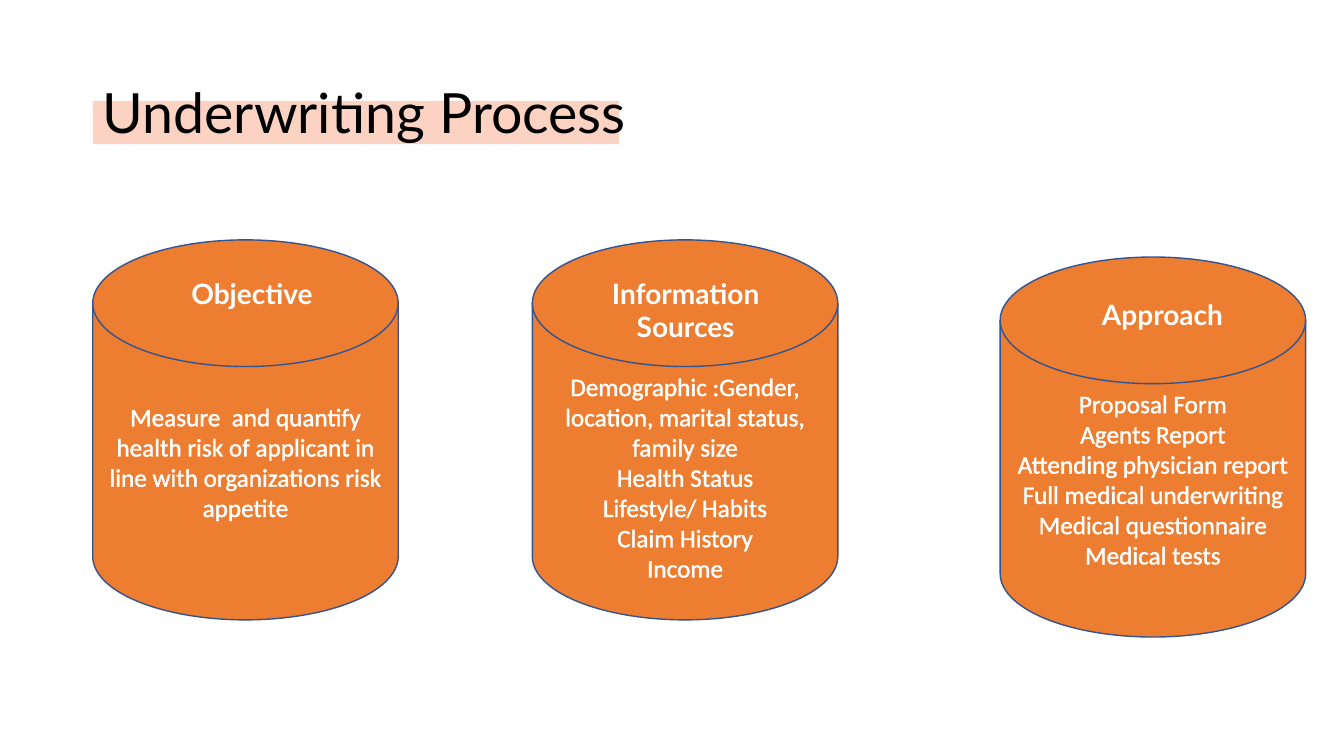
from dataclasses import dataclass

from lxml.etree import SubElement
from pptx import Presentation
from pptx.dml.color import RGBColor
from pptx.enum.shapes import MSO_SHAPE as Preset
from pptx.enum.text import MSO_ANCHOR as Anchor, PP_ALIGN as Align
from pptx.oxml.ns import qn
from pptx.shapes.autoshape import Shape
from pptx.slide import Slide
from pptx.text.text import TextFrame
from pptx.util import Inches, Pt

WHITE = RGBColor(0xFF, 0xFF, 0xFF)
BLACK = RGBColor(0, 0, 0)
ORANGE = RGBColor(0xED, 0x7D, 0x31)
BLUE = RGBColor(0x32, 0x54, 0x91)
PEACH = RGBColor(0xFC, 0xD3, 0xC2)

TITLE_FORMAT = {"name": "Lato", "size": Pt(39.6)}
HEADING_FORMAT = {"name": "Lato", "size": Pt(20), "bold": True}
BODY_FORMAT = {"name": "Calibri", "size": Pt(18)}

DISK_WIDTH, DISK_HEIGHT = 3.03, 3.77
HEADING_WIDTH = 2.22


@dataclass(frozen=True)
class Stage:
    heading: str
    lines: tuple[str, ...]
    left: float
    top: float
    heading_left: float
    heading_top: float
    heading_height: float = 0.44
    top_inset: float = 0.05


STAGES = (
    Stage(
        "Objective",
        ("Measure  and quantify health risk of applicant in line with organizations risk appetite",),
        0.92, 2.38, 1.39, 2.69,
    ),
    Stage(
        "Information Sources",
        (
            "Demographic :Gender, location, marital status, family size",
            "Health Status",
            "Lifestyle/ Habits",
            "Claim History",
            "Income",
        ),
        5.28, 2.38, 5.69, 2.69, heading_height=0.77, top_inset=0.35,
    ),
    Stage(
        "Approach",
        (
            "Proposal Form",
            "Agents Report",
            "Attending physician report",
            "Full medical underwriting",
            "Medical questionnaire",
            "Medical tests",
        ),
        9.92, 2.55, 10.42, 2.9,
    ),
)


def write_lines(frame: TextFrame, lines: tuple[str, ...], font_format: dict,
                color: RGBColor, alignment: Align) -> None:
    frame.word_wrap = True
    frame.text = "\n".join(lines)
    for paragraph in frame.paragraphs:
        paragraph.alignment = alignment
        for run in paragraph.runs:
            for name, value in font_format.items():
                setattr(run.font, name, value)
            run.font.color.rgb = color


def outline_text(frame: TextFrame, color: RGBColor, width: float) -> None:
    for paragraph in frame.paragraphs:
        for run in paragraph.runs:
            properties = run.font._element
            line = SubElement(properties, qn("a:ln"), w=str(Pt(width)))
            fill = SubElement(line, qn("a:solidFill"))
            SubElement(fill, qn("a:srgbClr"), val=str(color))
            properties.insert(0, line)


def add_filled_shape(slide: Slide, preset: Preset, left: float, top: float,
                     width: float, height: float, color: RGBColor) -> Shape:
    shape = slide.shapes.add_shape(
        preset, Inches(left), Inches(top), Inches(width), Inches(height))
    shape.shadow.inherit = False
    shape.fill.solid()
    shape.fill.fore_color.rgb = color
    return shape


def add_text(slide: Slide, text: str, left: float, top: float, width: float,
             height: float, font_format: dict, color: RGBColor,
             alignment: Align) -> TextFrame:
    box = slide.shapes.add_textbox(
        Inches(left), Inches(top), Inches(width), Inches(height))
    write_lines(box.text_frame, (text,), font_format, color, alignment)
    return box.text_frame


def add_title(slide: Slide) -> None:
    highlight = add_filled_shape(slide, Preset.RECTANGLE, 0.92, 1, 5.22, 0.43, PEACH)
    highlight.line.fill.background()
    frame = add_text(slide, "Underwriting Process", 0.92, 0.74, 5.58, 0.81,
                     TITLE_FORMAT, BLACK, Align.LEFT)
    frame.vertical_anchor = Anchor.MIDDLE
    frame.paragraphs[0].line_spacing = 0.9


def add_stage(slide: Slide, stage: Stage) -> None:
    disk = add_filled_shape(slide, Preset.FLOWCHART_MAGNETIC_DISK, stage.left,
                            stage.top, DISK_WIDTH, DISK_HEIGHT, ORANGE)
    disk.line.color.rgb = BLUE
    disk.line.width = Pt(1)
    frame = disk.text_frame
    frame.vertical_anchor = Anchor.MIDDLE
    frame.margin_top = Inches(stage.top_inset)
    write_lines(frame, stage.lines, BODY_FORMAT, WHITE, Align.CENTER)
    outline_text(frame, WHITE, 1.45)
    add_text(slide, stage.heading, stage.heading_left, stage.heading_top,
             HEADING_WIDTH, stage.heading_height, HEADING_FORMAT, WHITE, Align.CENTER)


def main() -> None:
    presentation = Presentation()
    presentation.slide_width = Inches(13.33)
    presentation.slide_height = Inches(7.5)
    slide = presentation.slides.add_slide(presentation.slide_layouts[6])
    add_title(slide)
    for stage in STAGES:
        add_stage(slide, stage)
    presentation.save("out.pptx")


if __name__ == "__main__":
    main()
